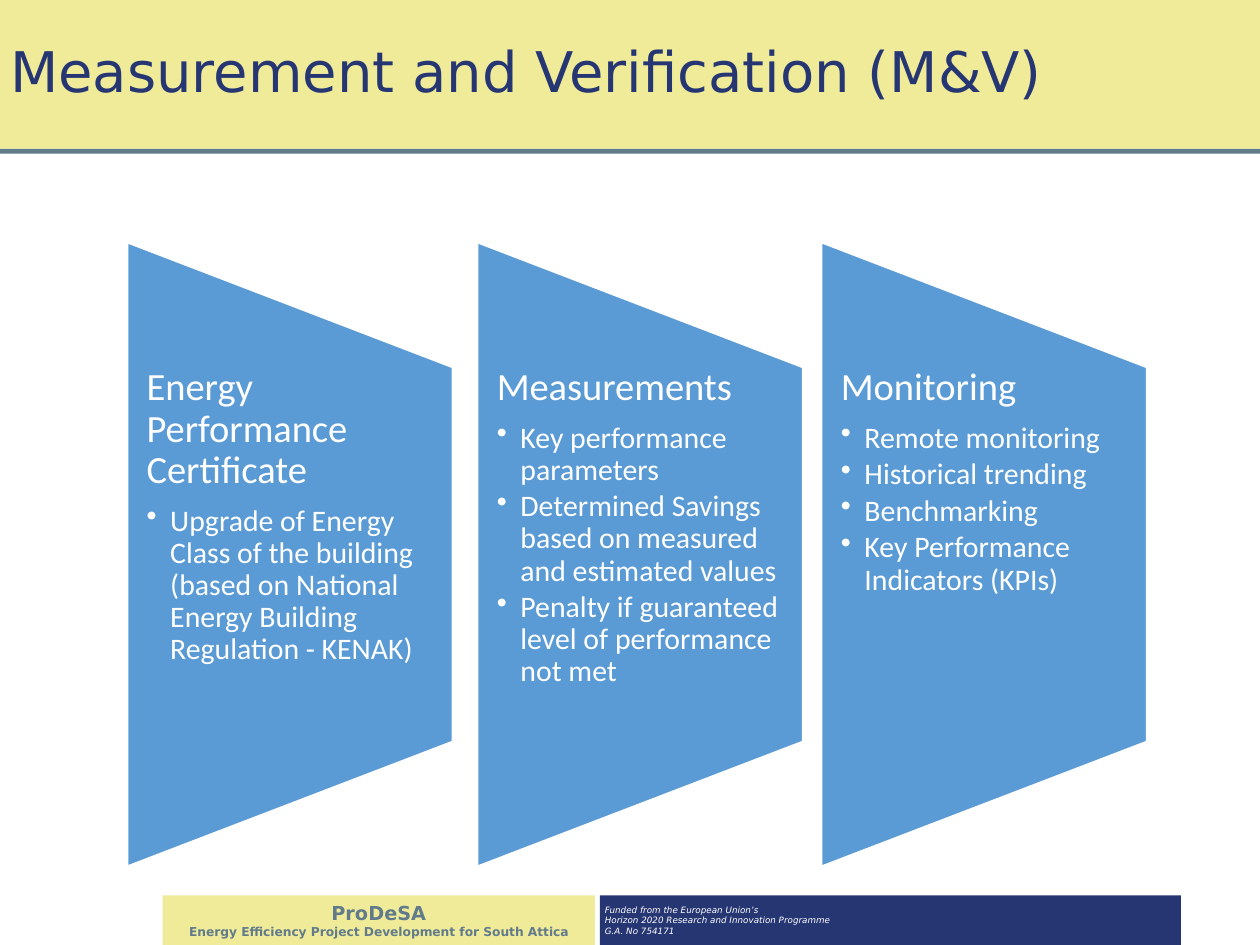
from lxml import etree
from pptx import Presentation
from pptx.dml.color import RGBColor
from pptx.enum.shapes import MSO_SHAPE
from pptx.enum.text import MSO_ANCHOR, PP_ALIGN
from pptx.oxml.ns import qn
from pptx.util import Pt

RECTANGLE = MSO_SHAPE.RECTANGLE
TRAPEZOID = MSO_SHAPE.FLOWCHART_MANUAL_OPERATION
MIDDLE = MSO_ANCHOR.MIDDLE
TOP = MSO_ANCHOR.TOP
LEFT = PP_ALIGN.LEFT
CENTER = PP_ALIGN.CENTER

COLORS = {
    "navy": "263673",
    "yellow": "F0EB99",
    "slate": "627B8B",
    "blue": "5B9BD5",
    "white": "FFFFFF",
}
DISPLAY_FONT = "DejaVu Sans"
BODY_FONT = "Calibri"

PANEL_WIDTH, PANEL_HEIGHT, PANEL_MIDDLE = 185.8, 356.4, 316.8
TEXT_HEIGHT = 213.8
PANELS = [
    (72.8, "Energy Performance Certificate", [
        "Upgrade of Energy Class of the building "
        "(based on National Energy Building Regulation - KENAK)",
    ]),
    (272.9, "Measurements", [
        "Key performance parameters",
        "Determined Savings based on measured and estimated values",
        "Penalty if guaranteed level of performance not met",
    ]),
    (469.5, "Monitoring", [
        "Remote monitoring",
        "Historical trending",
        "Benchmarking",
        "Key Performance Indicators (KPIs)",
    ]),
]


class SlideBuilder:
    def __init__(self, page):
        self.page = page

    def color(self, name):
        return RGBColor.from_string(COLORS[name])

    def shape(self, kind, left, top, width, height, fill, line=None):
        shape = self.page.shapes.add_shape(
            kind, Pt(left), Pt(top), Pt(width), Pt(height))
        shape.shadow.inherit = False
        shape.fill.solid()
        shape.fill.fore_color.rgb = self.color(fill)
        if line:
            shape.line.color.rgb = self.color(line)
            shape.line.width = Pt(1)
        else:
            shape.line.fill.background()
        return shape

    def frame(self, shape, margins, anchor):
        frame = shape.text_frame
        frame.word_wrap = True
        frame.vertical_anchor = anchor
        (frame.margin_left, frame.margin_top,
         frame.margin_right, frame.margin_bottom) = map(Pt, margins)
        return frame

    def paragraph(self, frame, text, size, color, font=DISPLAY_FONT, align=LEFT,
                  bold=False, italic=False, spacing=1.0, after=0, bullet=False):
        para = frame.paragraphs[0]
        if para.runs:
            para = frame.add_paragraph()
        para.add_run().text = text
        para.alignment = align
        para.line_spacing = spacing
        para.space_after = Pt(after)
        if bullet:
            self.bullet(para)
        para.font.name = font
        para.font.size = Pt(size)
        para.font.bold = bold
        para.font.italic = italic
        para.font.color.rgb = self.color(color)

    def bullet(self, para):
        para.level = 1
        props = para._p.get_or_add_pPr()
        props.set("marL", str(Pt(13.5)))
        props.set("indent", str(-Pt(13.5)))
        etree.SubElement(props, qn("a:buChar"), char="•")

    def panel(self, left, heading, points):
        # The trapezoid is laid out flat, then turned about its centre
        center = left + PANEL_WIDTH / 2
        trapezoid = self.shape(
            TRAPEZOID, center - PANEL_HEIGHT / 2, PANEL_MIDDLE - PANEL_WIDTH / 2,
            PANEL_HEIGHT, PANEL_WIDTH, "blue", line="white")
        trapezoid.rotation = 270
        box = self.page.shapes.add_textbox(
            Pt(left), Pt(PANEL_MIDDLE - TEXT_HEIGHT / 2),
            Pt(PANEL_WIDTH), Pt(TEXT_HEIGHT))
        frame = self.frame(box, (11, 0, 11.3, 0), TOP)
        self.paragraph(frame, heading, 22, "white", BODY_FONT,
                       spacing=0.9, after=7.7)
        for point in points:
            self.paragraph(frame, point, 17, "white", BODY_FONT,
                           spacing=0.9, after=2.55, bullet=True)


def main():
    deck = Presentation()
    deck.slide_width, deck.slide_height = Pt(720), Pt(540)
    builder = SlideBuilder(deck.slides.add_slide(deck.slide_layouts[6]))

    # Funding note
    note = builder.shape(RECTANGLE, 342.8, 511.7, 332, 28.3, "navy")
    frame = builder.frame(note, [2.9] * 4, MIDDLE)
    for line in ("Funded from the European Union’s",
                 "Horizon 2020 Research and Innovation Programme",
                 "G.A. No 754171"):
        builder.paragraph(frame, line, 5, "white", italic=True)

    # Title band and rule
    builder.shape(RECTANGLE, 0, 85, 720, 2.9, "slate")
    title = builder.shape(RECTANGLE, 0, 0, 720, 85, "yellow")
    frame = builder.frame(title, [5.8] * 4, MIDDLE)
    builder.paragraph(frame, "Measurement and Verification (M&V)", 32, "navy",
                      spacing=0.9)

    # Project label
    label = builder.shape(RECTANGLE, 93, 511.7, 247, 28.3, "yellow")
    frame = builder.frame(label, [2.9] * 4, MIDDLE)
    for line, size in (("ProDeSA", 11),
                       ("Energy Efficiency Project Development for South Attica", 7)):
        builder.paragraph(frame, line, size, "slate", align=CENTER, bold=True)

    # Three panels
    for left, heading, points in PANELS:
        builder.panel(left, heading, points)

    deck.save("out.pptx")


if __name__ == "__main__":
    main()
